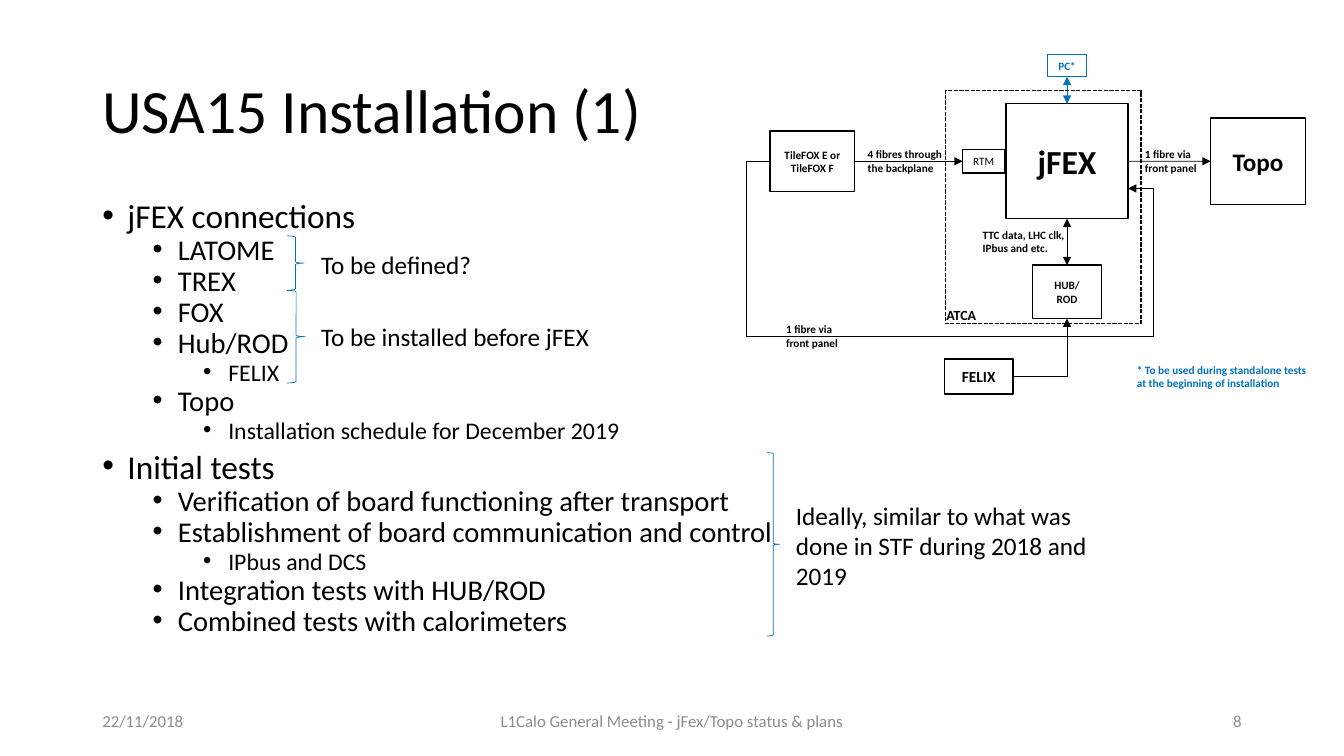
from lxml import etree
from pptx import Presentation
from pptx.dml.color import RGBColor
from pptx.enum import dml, shapes as kinds, text as txt
from pptx.oxml import ns
from pptx.util import Pt

INK = {"black": "000000", "blue": "0070C0", "grey": "8C8C8C", "white": "FFFFFF"}
LEFT, MID, RIGHT = txt.PP_ALIGN.LEFT, txt.PP_ALIGN.CENTER, txt.PP_ALIGN.RIGHT
TOP, CENTRE = txt.MSO_ANCHOR.TOP, txt.MSO_ANCHOR.MIDDLE

# level: indent, size, space before
LEVELS = [(18, 23.8, 10), (54, 20.4, 5), (90, 17, 5)]
POINTS = [
    (0, "jFEX connections"),
    (1, "LATOME"),
    (1, "TREX"),
    (1, "FOX"),
    (1, "Hub/ROD"),
    (2, "FELIX"),
    (1, "Topo"),
    (2, "Installation schedule for December 2019"),
    (0, "Initial tests"),
    (1, "Verification of board functioning after transport"),
    (1, "Establishment of board communication and control"),
    (2, "IPbus and DCS"),
    (1, "Integration tests with HUB/ROD"),
    (1, "Combined tests with calorimeters"),
]
# brace box, then note box
NOTES = [
    ((139, 24.5, 12.2, 38.9), (156.3, 30.2, 136, 29), "To be defined?"),
    ((139, 63.4, 13, 66.2), (156.3, 82.1, 228, 29), "To be installed before jFEX"),
    ((481.7, 179.3, 9.4, 131), (495.4, 209.5, 228, 73),
     "Ideally, similar to what was done in STF during 2018 and 2019"),
]
AXIS, ROW = 229.2, 76.2  # centre of jFEX inside the diagram
# name: centre x, centre y, width, height, lines, size, bold, colour
BLOCKS = {
    "tile": (47.35, ROW, 60.5, 43.2, ["TileFOX E or TileFOX F"], 8, True, "black"),
    "rtm": (169.7, ROW, 30.2, 16.6, ["RTM"], 8, False, "black"),
    "jfex": (AXIS, ROW, 87.1, 82.1, ["jFEX"], 24, True, "black"),
    "topo": (365.6, ROW, 67.7, 61.9, ["Topo"], 18, True, "black"),
    "hub": (AXIS, 169.5, 49, 38.2, ["HUB/", "ROD"], 8, True, "black"),
    "pc": (AXIS, 7.9, 28.1, 15.8, ["PC*"], 8, True, "blue"),
    "felix": (166.1, 229.9, 49, 25.2, ["FELIX"], 11, True, "black"),
}
# from, side, to, side, colour, both ends
LINKS = [
    ("tile", 3, "rtm", 1, "black", False),
    ("jfex", 2, "hub", 0, "black", True),
    ("pc", 2, "jfex", 0, "blue", True),
    ("jfex", 3, "topo", 1, "black", False),
    ("felix", 3, "hub", 2, "black", False),
]
LABELS = [
    ((21.4, 189.2, 58.3, 23.8), "1 fibre via front panel", 8, "black"),
    ((79.7, 64, 71.3, 23.8), "4 fibres through the backplane", 8, "black"),
    ((161.8, 121.6, 77.8, 23.8), "TTC data, LHC clk, IPbus and etc.", 8, "black"),
    ((135.9, 177.7, 45, 15.8), "ATCA", 10, "black"),
    ((277.7, 64, 58.3, 23.8), "1 fibre via front panel", 8, "black"),
    ((272, 217.3, 141.8, 25.2),
     "* To be used during standalone tests at the beginning of installation", 8, "blue"),
]
LOOP = [(17.1, ROW), (0, ROW), (0, 201.5), (290.7, 201.5), (290.7, 95.6), (272.75, 95.6)]


def rgb(ink):
    return RGBColor.from_string(INK[ink])


def pts(box):
    return [Pt(v) for v in box]


def shift(box, area):
    """Move a box that is given relative to an area onto the slide."""
    x, y, w, h = box
    return x + area[0], y + area[1], w, h


def write(par, words, size, ink="black", bold=False, align=LEFT):
    par.alignment = align
    run = par.add_run()
    run.text = words
    font = run.font
    font.name, font.size, font.bold = "Calibri", Pt(size), bold
    font.color.rgb = rgb(ink)


def label(slide, box, words, size, ink="black", bold=False, align=LEFT, anchor=CENTRE):
    frame = slide.shapes.add_textbox(*pts(box)).text_frame
    frame.word_wrap, frame.vertical_anchor = True, anchor
    write(frame.paragraphs[0], words, size, ink, bold, align)
    return frame


def outline(shape, ink, width):
    shape.line.color.rgb = rgb(ink)
    shape.line.width = Pt(width)


def outlined(slide, kind, box, ink, width):
    shape = slide.shapes.add_shape(kind, *pts(box))
    shape.shadow.inherit = False
    shape.fill.background()
    outline(shape, ink, width)
    return shape


def tips(shape, both=False):
    """Put arrowheads on the end, or on both ends, of a line."""
    for tag in ["a:headEnd", "a:tailEnd"][0 if both else 1:]:
        etree.SubElement(shape.line._get_or_add_ln(), ns.qn(tag), type="triangle")


def title(slide, box):
    frame = label(slide, box, "USA15 Installation (1)", 44)
    frame.paragraphs[0].line_spacing = 0.9


def outline_list(slide, box):
    """Bulleted list with the braces and remarks beside it."""
    frame = slide.shapes.add_textbox(*pts(box)).text_frame
    frame.word_wrap = True
    for i, (level, words) in enumerate(POINTS):
        par = frame.add_paragraph() if i else frame.paragraphs[0]
        indent, size, gap = LEVELS[level]
        par.level, par.line_spacing, par.space_before = level, 0.7, Pt(gap)
        write(par, words, size)
        props = par._p.get_or_add_pPr()
        props.set("marL", str(Pt(indent)))
        props.set("indent", str(Pt(-18)))
        etree.SubElement(props, ns.qn("a:buFont"), typeface="Arial")
        etree.SubElement(props, ns.qn("a:buChar"), char="•")
    for brace, note, words in NOTES:
        outlined(slide, kinds.MSO_SHAPE.RIGHT_BRACE, shift(brace, box), "blue", 0.5)
        label(slide, shift(note, box), words, 18, anchor=TOP)


def block(slide, area, cx, cy, w, h, lines, size, bold, ink):
    place = shift((cx - w / 2, cy - h / 2, w, h), area)
    shape = outlined(slide, kinds.MSO_SHAPE.RECTANGLE, place, ink, 1)
    shape.fill.solid()
    shape.fill.fore_color.rgb = rgb("white")
    frame = shape.text_frame
    frame.word_wrap, frame.vertical_anchor = True, CENTRE
    frame.margin_left = frame.margin_right = frame.margin_top = frame.margin_bottom = 0
    for i, words in enumerate(lines):
        par = frame.add_paragraph() if i else frame.paragraphs[0]
        write(par, words, size, ink, bold, MID)
    return shape


def link(slide, start, out, end, into, ink, both):
    straight = (out - into) % 2 == 0
    kind = kinds.MSO_CONNECTOR.STRAIGHT if straight else kinds.MSO_CONNECTOR.ELBOW
    line = slide.shapes.add_connector(kind, 0, 0, 0, 0)
    line.begin_connect(start, out)
    line.end_connect(end, into)
    outline(line, ink, 0.5)
    tips(line, both)
    props = line._element.spPr
    if not straight:
        props.find(ns.qn("a:prstGeom")).set("prst", "bentConnector2")
    etree.SubElement(props, ns.qn("a:effectLst"))


def diagram(slide, area):
    """Crate with its boards, their links and labels."""
    crate = outlined(slide, kinds.MSO_SHAPE.RECTANGLE,
                     shift((142.4, 25.8, 139.7, 166.3), area), "black", 1)
    crate.line.dash_style = dml.MSO_LINE.SQUARE_DOT
    route = [(Pt(x + area[0]), Pt(y + area[1])) for x, y in LOOP]
    pen = slide.shapes.build_freeform(*route[0])
    pen.add_line_segments(route[1:], close=False)
    loop = pen.convert_to_shape()
    loop.shadow.inherit = False
    loop.fill.background()
    outline(loop, "black", 0.5)
    tips(loop)
    boards = {name: block(slide, area, *parts) for name, parts in BLOCKS.items()}
    for start, out, end, into, ink, both in LINKS:
        link(slide, boards[start], out, boards[end], into, ink, both)
    for box, words, size, ink in LABELS:
        label(slide, shift(box, area), words, size, ink, True)


def footer(slide, box):
    x, y, w, h = box
    label(slide, (x, y, 216, h), "22/11/2018", 12, "grey")
    label(slide, (x + w / 2 - 162, y, 324, h),
          "L1Calo General Meeting - jFex/Topo status & plans", 12, "grey", align=MID)
    label(slide, (x + w - 216, y, 216, h), "8", 12, "grey", align=RIGHT)


def main():
    deck = Presentation()
    deck.slide_width, deck.slide_height = Pt(960), Pt(540)
    slide = deck.slides.add_slide(deck.slide_layouts[6])
    title(slide, (66, 28.8, 828, 104.4))
    outline_list(slide, (66, 144, 828, 342.7))
    footer(slide, (66, 500.5, 828, 28.8))
    diagram(slide, (533, 39, 414, 243))
    deck.save("out.pptx")


if __name__ == "__main__":
    main()
